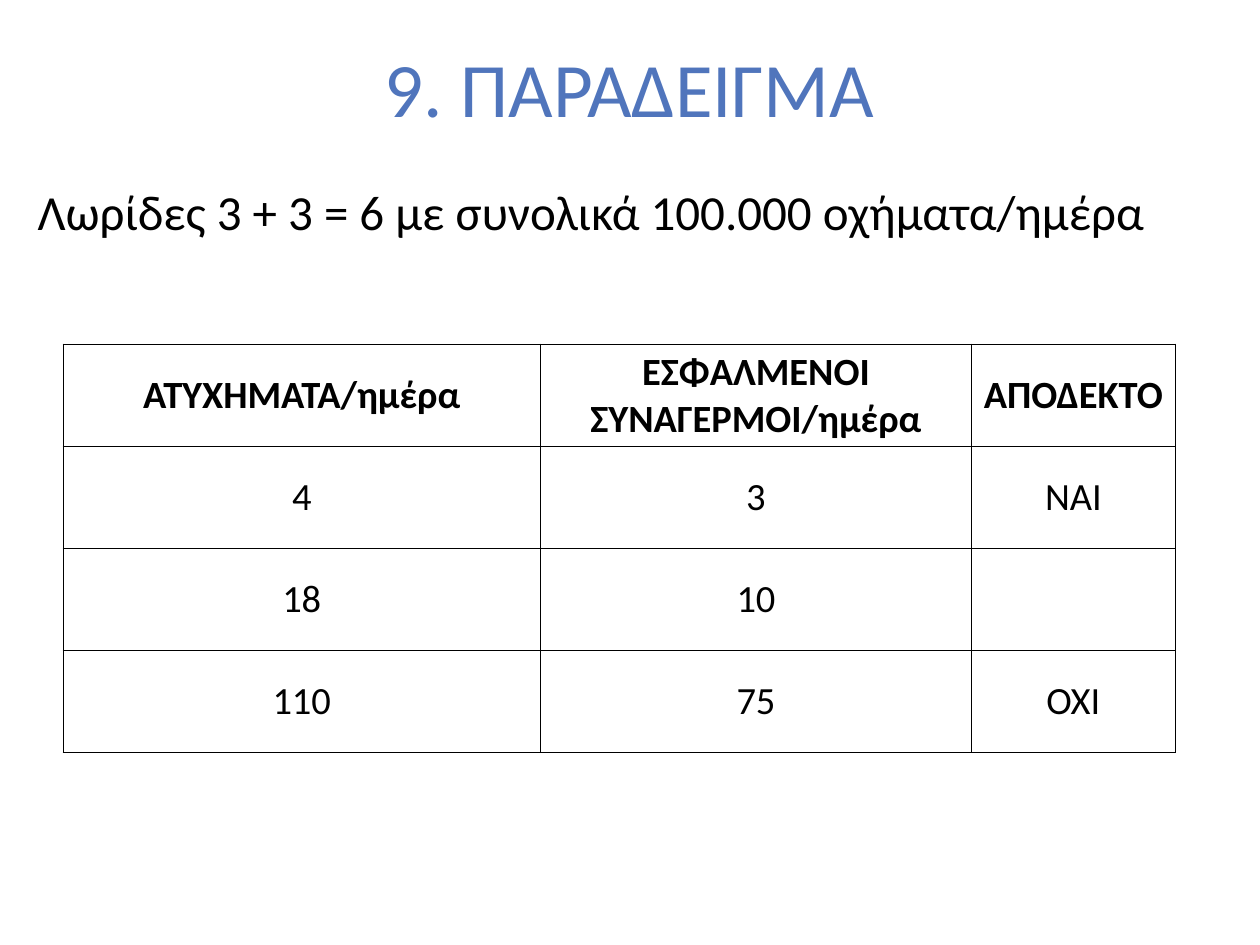
from dataclasses import dataclass

from lxml.etree import SubElement
from pptx import Presentation
from pptx.dml.color import RGBColor
from pptx.enum.text import MSO_ANCHOR, PP_ALIGN
from pptx.oxml.ns import qn
from pptx.util import Inches, Pt


@dataclass(frozen=True)
class Theme:
    """Colours, font and type sizes of the slide."""
    font: str = "Calibri"
    accent: str = "5075BC"
    ink: str = "000000"
    title_size: int = 44
    body_size: int = 28
    table_size: int = 22
    border_width: float = 0.5


def write(frame, text, *, font, size, color, bold=False, align=PP_ALIGN.LEFT):
    """Put formatted text in the first paragraph of a text frame."""
    frame.word_wrap = True
    paragraph = frame.paragraphs[0]
    paragraph.alignment = align
    run = paragraph.add_run()
    run.text = text
    run.font.name = font
    run.font.size = Pt(size)
    run.font.bold = bold
    run.font.color.rgb = RGBColor.from_string(color)


class SlideBuilder:
    """Adds themed elements to one slide."""

    def __init__(self, slide, theme):
        self.slide = slide
        self.theme = theme

    def title(self, text, left, top, width, height):
        """Move and fill the title placeholder."""
        heading = self.slide.shapes.title
        heading.left, heading.top = Inches(left), Inches(top)
        heading.width, heading.height = Inches(width), Inches(height)
        heading.text_frame.vertical_anchor = MSO_ANCHOR.MIDDLE
        write(heading.text_frame, text, font=self.theme.font,
              size=self.theme.title_size, color=self.theme.accent,
              align=PP_ALIGN.CENTER)

    def body(self, text, left, top, width, height):
        """Add a left-aligned text box."""
        statement = self.slide.shapes.add_textbox(
            Inches(left), Inches(top), Inches(width), Inches(height))
        write(statement.text_frame, text, font=self.theme.font,
              size=self.theme.body_size, color=self.theme.ink)

    def table(self, rows, left, top, column_widths, row_height):
        """Add a plain bordered table with a bold header row."""
        grid = self.slide.shapes.add_table(
            len(rows), len(column_widths), Inches(left), Inches(top),
            Inches(sum(column_widths)), Inches(row_height * len(rows))).table
        grid.horz_banding = False
        for column, width in zip(grid.columns, column_widths):
            column.width = Inches(width)
        for row_index, entries in enumerate(rows):
            grid.rows[row_index].height = Inches(row_height)
            for column_index, text in enumerate(entries):
                self.cell(grid.cell(row_index, column_index), text,
                          bold=row_index == 0)

    def cell(self, cell, text, bold):
        """Format one cell, with its borders and centred text."""
        cell.vertical_anchor = MSO_ANCHOR.MIDDLE
        cell.margin_left = cell.margin_right = cell.margin_top = Inches(0.01)
        cell.margin_bottom = 0
        properties = cell._tc.get_or_add_tcPr()
        for side in ("a:lnL", "a:lnR", "a:lnT", "a:lnB"):
            border = SubElement(properties, qn(side),
                                w=str(Pt(self.theme.border_width)))
            paint = SubElement(border, qn("a:solidFill"))
            SubElement(paint, qn("a:srgbClr"), val=self.theme.ink)
        cell.fill.background()
        if text:
            write(cell.text_frame, text, font=self.theme.font,
                  size=self.theme.table_size, color=self.theme.ink,
                  bold=bold, align=PP_ALIGN.CENTER)


def main():
    """Build and save the example slide."""
    presentation = Presentation()
    presentation.slide_width, presentation.slide_height = Inches(10), Inches(7.5)
    slide = presentation.slides.add_slide(presentation.slide_layouts[5])
    builder = SlideBuilder(slide, Theme())
    builder.title("9. ΠΑΡΑΔΕΙΓΜΑ", 0.5, 0.3, 9, 0.77)
    builder.body("Λωρίδες 3 + 3 = 6 με συνολικά 100.000 οχήματα/ημέρα",
                 0.2, 1.39, 9.61, 5.75)
    alarm_rates = [
        ("ΑΤΥΧΗΜΑΤΑ/ημέρα", "ΕΣΦΑΛΜΕΝΟΙ ΣΥΝΑΓΕΡΜΟΙ/ημέρα", "ΑΠΟΔΕΚΤΟ"),
        ("4", "3", "ΝΑΙ"),
        ("18", "10", ""),
        ("110", "75", "ΌΧΙ"),
    ]
    builder.table(alarm_rates, 0.5, 2.73, (3.79, 3.42, 1.62), 0.81)
    presentation.save("out.pptx")


if __name__ == "__main__":
    main()
